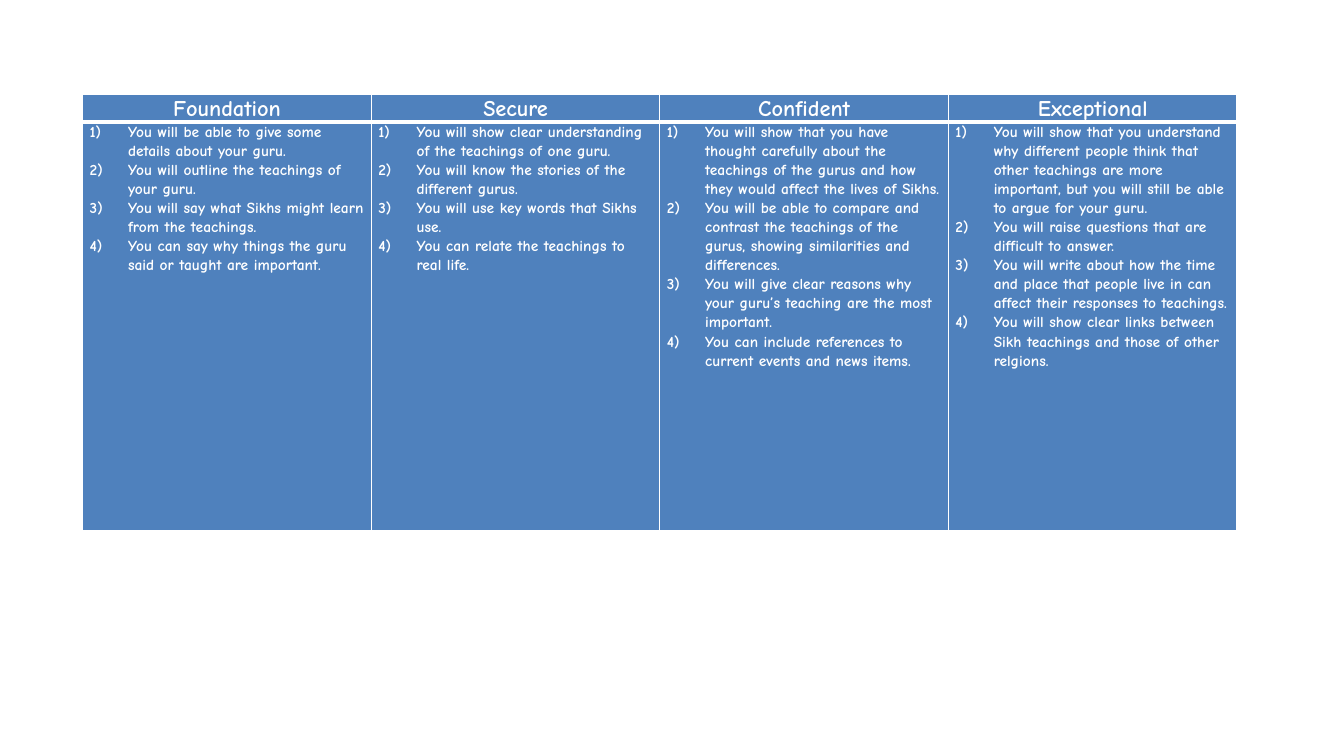
from dataclasses import dataclass

from lxml import etree
from pptx import Presentation
from pptx.dml.color import RGBColor
from pptx.enum import text
from pptx.oxml import ns
from pptx.util import Inches, Pt


@dataclass(frozen=True)
class Theme:
    font: str = "Comic Neue"
    white: str = "FFFFFF"
    blue: str = "4F81BD"
    head: int = 16
    body: int = 11


THEME = Theme()

LEVELS = {
    "Foundation": [
        "You will be able to give some details about your guru.",
        "You will outline the teachings of your guru.",
        "You will say what Sikhs might learn from the teachings.",
        "You can say why things the guru said or taught are important.",
    ],
    "Secure": [
        "You will show clear understanding of the teachings of one guru.",
        "You will know the stories of the different gurus.",
        "You will use key words that Sikhs use.",
        "You can relate the teachings to real life.",
    ],
    "Confident": [
        "You will show that you have thought carefully about the teachings of "
        "the gurus and how they would affect the lives of Sikhs.",
        "You will be able to compare and contrast the teachings of the gurus, "
        "showing similarities and differences.",
        "You will give clear reasons why your guru’s teaching are the most important.",
        "You can include references to current events and news items.",
    ],
    "Exceptional": [
        "You will show that you understand why different people think that "
        "other teachings are more important, but you will still be able to "
        "argue for your guru.",
        "You will raise questions that are difficult to answer.",
        "You will write about how the time and place that people live in can "
        "affect their responses to teachings.",
        "You will show clear links between Sikh teachings and those of other relgions.",
    ],
}


def add_edges(cell, **widths):
    """Draw white cell borders; widths are points by side, in L, R, T, B order."""
    props = cell._tc.get_or_add_tcPr()
    for side, width in widths.items():
        line = etree.SubElement(props, ns.qn(f"a:ln{side}"), w=str(Pt(width)))
        fill = etree.SubElement(line, ns.qn("a:solidFill"))
        etree.SubElement(fill, ns.qn("a:srgbClr"), val=THEME.white)


def style_cell(cell, top, bottom):
    add_edges(cell, L=1, R=1, T=top, B=bottom)
    cell.fill.solid()
    cell.fill.fore_color.rgb = RGBColor.from_string(THEME.blue)
    cell.margin_left = cell.margin_right = Inches(0.07)
    cell.margin_top = cell.margin_bottom = 0


def number(para):
    """Give the paragraph a hanging automatic number such as 1)."""
    props = para._p.get_or_add_pPr()
    indent = Inches(0.38)
    props.set("marL", str(indent))
    props.set("indent", str(-indent))
    etree.SubElement(props, ns.qn("a:buFont"), typeface="+mj-lt")
    etree.SubElement(props, ns.qn("a:buAutoNum"), type="arabicParenR")


def add_text(para, words, size):
    para.line_spacing = 1.07
    run = para.add_run()
    run.text = words
    font = run.font
    font.name, font.size, font.bold = THEME.font, Pt(size), True
    font.color.rgb = RGBColor.from_string(THEME.white)


def fill_head(cell, title):
    style_cell(cell, top=1, bottom=3)
    para = cell.text_frame.paragraphs[0]
    para.alignment = text.PP_ALIGN.CENTER
    para.space_after = Pt(8)
    add_text(para, title, THEME.head)


def fill_body(cell, goals):
    style_cell(cell, top=3, bottom=1)
    frame = cell.text_frame
    for index, goal in enumerate(goals):
        para = frame.add_paragraph() if index else frame.paragraphs[0]
        number(para)
        add_text(para, goal, THEME.body)


def add_levels(slide):
    table = slide.shapes.add_table(
        2, len(LEVELS), Inches(0.82), Inches(0.94), Inches(11.45), Inches(4.32)
    ).table
    table.rows[0].height = Inches(0.22)
    table.rows[1].height = Inches(4.05)
    for col, (title, goals) in enumerate(LEVELS.items()):
        fill_head(table.cell(0, col), title)
        fill_body(table.cell(1, col), goals)


def main():
    deck = Presentation()
    deck.slide_width, deck.slide_height = Inches(13.33), Inches(7.5)
    blank = deck.slide_layouts[6]
    add_levels(deck.slides.add_slide(blank))
    deck.save("out.pptx")


if __name__ == "__main__":
    main()
